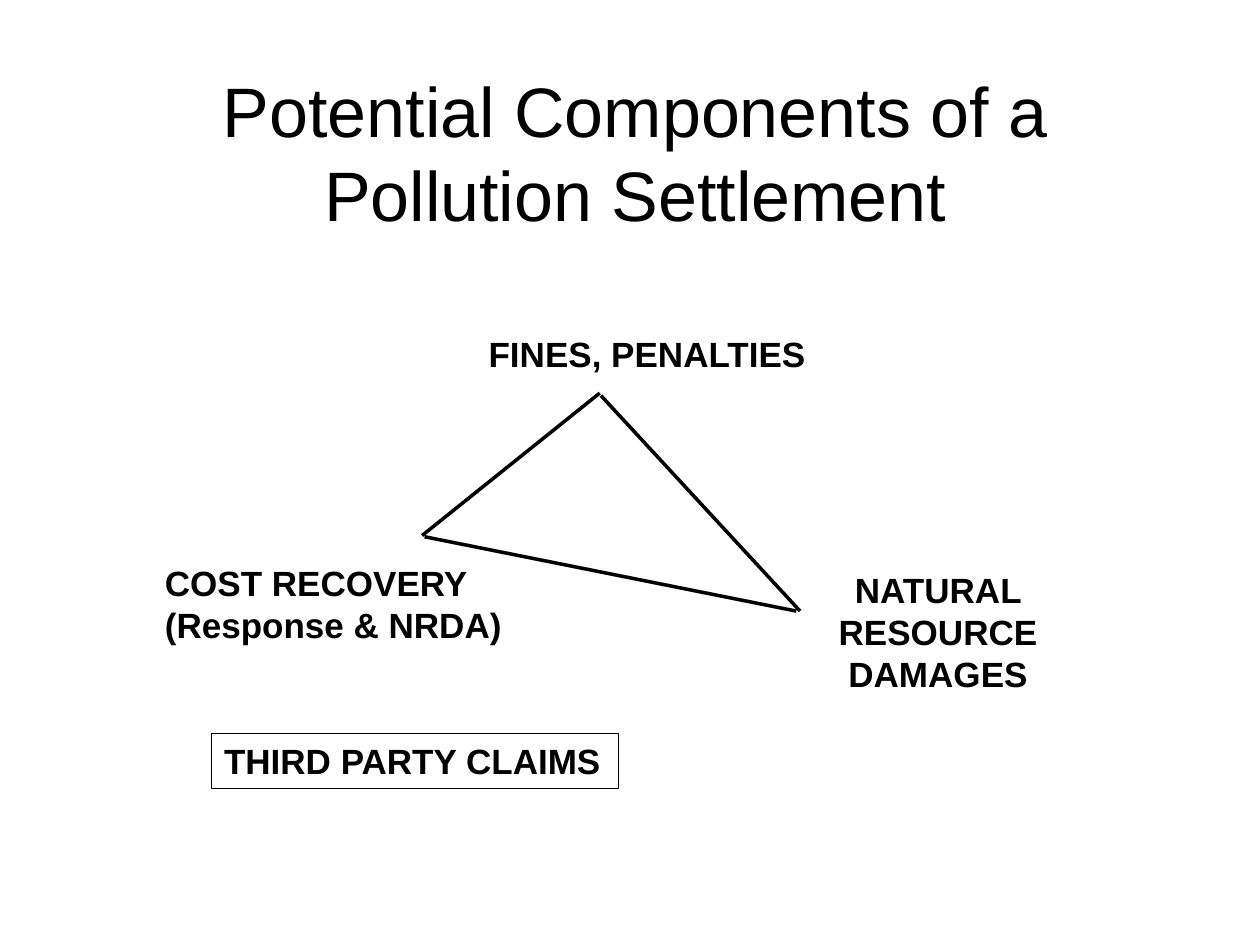
from pptx import Presentation
from pptx.dml.color import RGBColor
from pptx.enum import shapes, text
from pptx.oxml.ns import qn
from pptx.util import Inches, Pt
from lxml import etree


def color(value):
    return RGBColor.from_string(value)


class Diagram:
    font = "Arial"
    ink = "000000"

    def __init__(self, slide):
        self.s = slide

    def set_text(self, sp, content, size=20, bold=True, align="LEFT", wrap=False,
                 anchor="TOP", margin=0.1, grow=True):
        """Fill a shape with text, one paragraph per line."""
        tf = sp.text_frame
        tf.word_wrap = wrap
        tf.vertical_anchor = text.MSO_ANCHOR[anchor]
        tf.margin_left = tf.margin_right = Inches(margin)
        if grow:
            tf.auto_size = text.MSO_AUTO_SIZE.SHAPE_TO_FIT_TEXT
        for i, line in enumerate(content.split("\n")):
            p = tf.add_paragraph() if i else tf.paragraphs[0]
            p.alignment = text.PP_ALIGN[align]
            r = p.add_run()
            r.text = line
            r.font.name = self.font
            r.font.size = Pt(size)
            r.font.bold = bold
            r.font.color.rgb = color(self.ink)

    def label(self, box, content, **style):
        sp = self.s.shapes.add_textbox(*map(Inches, box))
        self.set_text(sp, content, **style)

    def framed_label(self, box, content, **style):
        sp = self.s.shapes.add_shape(shapes.MSO_SHAPE.RECTANGLE, *map(Inches, box))
        sp.shadow.inherit = False
        sp.fill.background()
        sp.line.color.rgb = color(self.ink)
        sp.line.width = Pt(0.75)
        self.set_text(sp, content, **style)

    def line(self, start, end):
        c = self.s.shapes.add_connector(
            shapes.MSO_CONNECTOR.STRAIGHT, *map(Inches, start + end))
        c.line.color.rgb = color(self.ink)
        c.line.width = Pt(2)
        etree.SubElement(c._element.spPr, qn("a:effectLst"))


def main():
    prs = Presentation()
    prs.slide_width, prs.slide_height = Inches(10), Inches(7.5)
    d = Diagram(prs.slides.add_slide(prs.slide_layouts[6]))

    d.label((0.54, 0.58, 9, 1.25), "Potential Components of a Pollution Settlement",
            size=40, bold=False, align="CENTER", wrap=True, anchor="MIDDLE",
            margin=0.15, grow=False)
    d.label((3.78, 2.59, 2.74, 0.43), "FINES, PENALTIES")
    d.label((1.21, 4.41, 2.88, 0.77), "COST RECOVERY\n(Response & NRDA)")
    d.label((5.91, 4.46, 3.07, 1.1), "NATURAL RESOURCE DAMAGES",
            align="CENTER", wrap=True)

    triangle = [((4.76, 3.12), (3.35, 4.25)),
                ((4.77, 3.14), (6.35, 4.85)),
                ((3.37, 4.26), (6.32, 4.85))]
    for start, end in triangle:
        d.line(start, end)

    d.framed_label((1.68, 5.82, 3.23, 0.44), "THIRD PARTY CLAIMS")
    prs.save("out.pptx")


if __name__ == "__main__":
    main()
